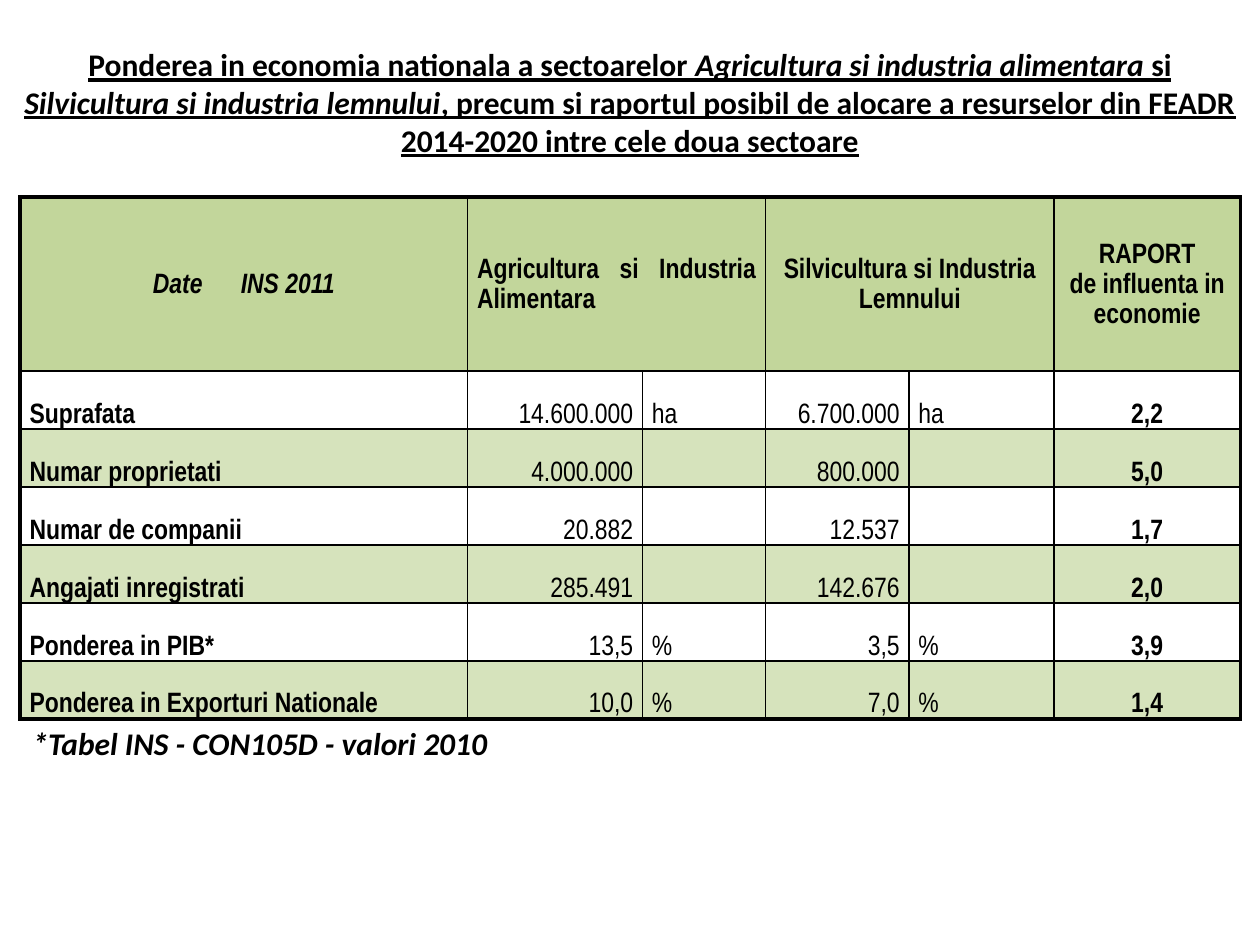
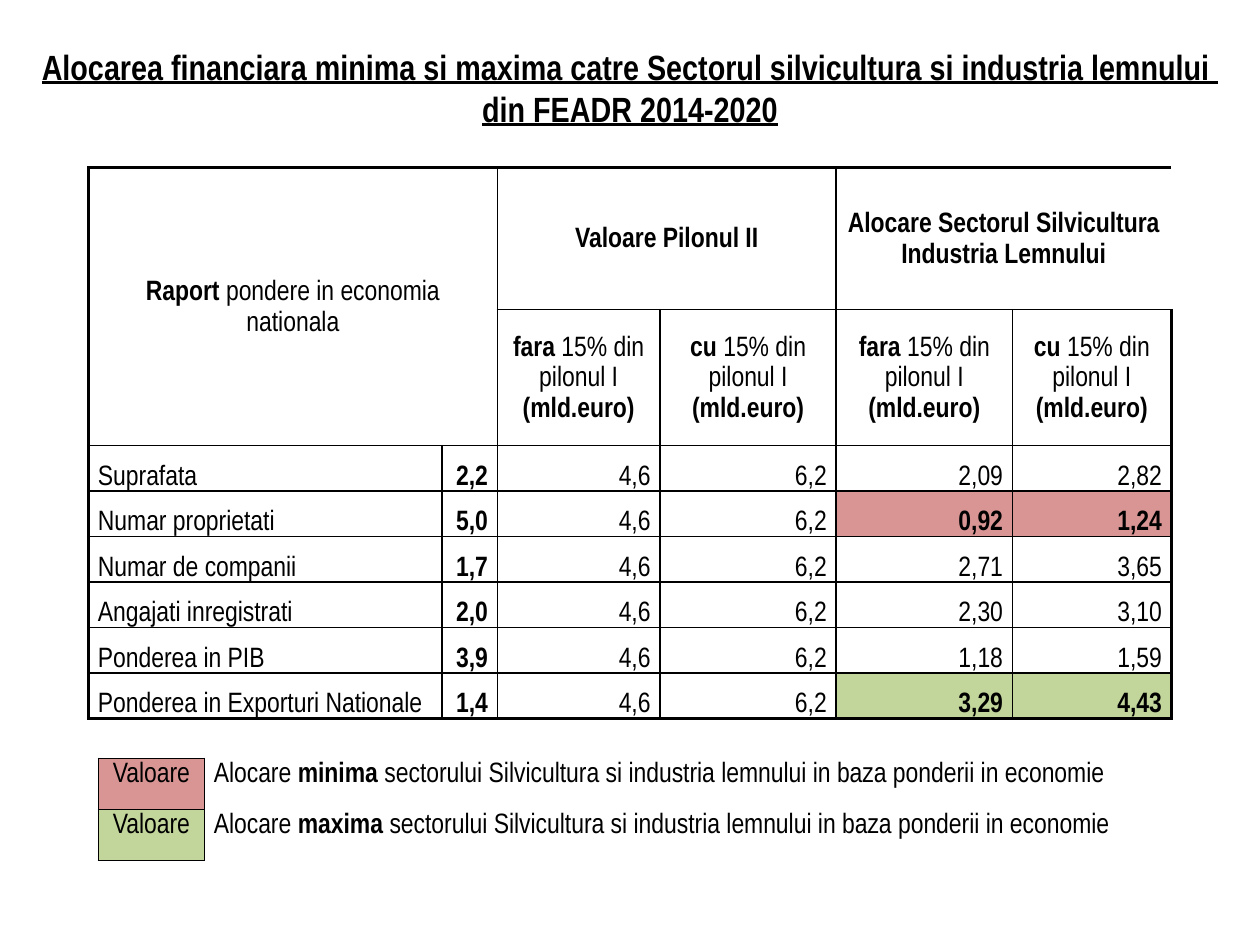
from lxml import etree
from pptx import Presentation
from pptx.dml.color import RGBColor
from pptx.enum.text import MSO_ANCHOR, PP_ALIGN
from pptx.oxml.ns import qn
from pptx.util import Pt

LEFT, CENTER, RIGHT, JUSTIFY = PP_ALIGN.LEFT, PP_ALIGN.CENTER, PP_ALIGN.RIGHT, PP_ALIGN.JUSTIFY
TOP, MIDDLE, BOTTOM = MSO_ANCHOR.TOP, MSO_ANCHOR.MIDDLE, MSO_ANCHOR.BOTTOM

BLACK = RGBColor(0x00, 0x00, 0x00)
OUTLINE_GREEN = RGBColor(0x77, 0x93, 0x3C)
GREEN = RGBColor(0xC2, 0xD6, 0x9B)
PALE_GREEN = RGBColor(0xD6, 0xE3, 0xBC)
RED = RGBColor(0xD9, 0x95, 0x94)

NARROW, CALIBRI = "Arial Narrow", "Calibri"
NO_STYLE = "{2D5ABB26-0587-4C30-8999-92F81FD0307C}"
SIDES = {"lnL": (0, -1), "lnR": (0, 1), "lnT": (-1, 0), "lnB": (1, 0)}
THICK, THIN = 2.25, 1


def add_line(parent, tag, width, color):
    """Add a solid line element, for a cell border or a text outline."""
    ln = etree.Element(qn(f"a:{tag}"), w=str(int(Pt(width))))
    fill = etree.SubElement(ln, qn("a:solidFill"))
    etree.SubElement(fill, qn("a:srgbClr"), val=str(color))
    parent.append(ln)


def format_run(r, size=16, font=NARROW, bold=False, italic=False,
               underline=False, outline=False, spacing=0):
    rPr = r._r.get_or_add_rPr()
    if outline:
        add_line(rPr, "ln", 0.83, OUTLINE_GREEN)
    if spacing:
        rPr.set("spc", str(int(spacing * 100)))
    f = r.font
    f.size, f.name, f.bold, f.italic, f.underline = Pt(size), font, bold, italic, underline
    f.color.rgb = BLACK


def put_text(tf, text, align=LEFT, line_spacing=None, marked=None, **fmt):
    """Write text; each line is a paragraph, parts between bars take the marked format."""
    for i, line in enumerate(text.split("\n")):
        p = tf.add_paragraph() if i else tf.paragraphs[0]
        p.alignment = align
        if line_spacing:
            p.line_spacing = line_spacing
        for j, part in enumerate(line.split("|")):
            if part:
                r = p.add_run()
                r.text = part
                format_run(r, **{**fmt, **(marked or {} if j % 2 else {})})


class Deck:
    def __init__(self):
        self.prs = Presentation()
        self.prs.slide_width, self.prs.slide_height = Pt(720), Pt(540)
        self.s = None

    def new_slide(self):
        self.s = self.prs.slides.add_slide(self.prs.slide_layouts[6])

    def text(self, box, text, anchor=TOP, wrap=True, **fmt):
        sp = self.s.shapes.add_textbox(*map(Pt, box))
        tf = sp.text_frame
        tf.word_wrap, tf.vertical_anchor = wrap, anchor
        put_text(tf, text, outline=True, bold=True, **fmt)

    def title(self, height, text, **fmt):
        self.text((0, 22.3, 720, height), text, align=CENTER, underline=True, **fmt)

    def table(self, left, top, cols, rows, data, look, merges=(),
              outer=THICK, open_after=(), bare_cols=()):
        """look(row, col) gives fill, anchor and text format of a cell."""
        frame = self.s.shapes.add_table(len(rows), len(cols), Pt(left), Pt(top),
                                        Pt(sum(cols)), Pt(sum(rows)))
        tbl = frame.table
        tbl.first_row = tbl.horz_banding = False
        tbl._tbl.tblPr.find(qn("a:tableStyleId")).text = NO_STYLE
        for col, width in zip(tbl.columns, cols):
            col.width = Pt(width)
        for row, height in zip(tbl.rows, rows):
            row.height = Pt(height)

        # Every grid position belongs to the first cell of its merged area
        owner = {(r, c): (r, c) for r in range(len(rows)) for c in range(len(cols))}
        for r1, c1, r2, c2 in merges:
            tbl.cell(r1, c1).merge(tbl.cell(r2, c2))
            for r in range(r1, r2 + 1):
                for c in range(c1, c2 + 1):
                    owner[r, c] = r1, c1

        for (r, c), own in owner.items():
            cell = tbl.cell(r, c)
            cell.margin_left = cell.margin_right = Pt(5.4)
            cell.margin_top = cell.margin_bottom = 0
            # Borders: thick or thin at the rim, thin inside
            for tag, (dr, dc) in SIDES.items():
                near = owner.get((r + dr, c + dc))
                is_open = r > 0 and dc and min(c, c + dc) in open_after
                if near != own and not is_open and c not in bare_cols:
                    add_line(cell._tc.get_or_add_tcPr(), tag, THIN if near else outer, BLACK)
            # Fill and text
            fmt = look(r, c)
            fill = fmt.pop("fill", None)
            if fill is None:
                cell.fill.background()
            else:
                cell.fill.solid()
                cell.fill.fore_color.rgb = fill
            cell.vertical_anchor = fmt.pop("anchor", TOP)
            if data[r][c]:
                put_text(cell.text_frame, data[r][c], line_spacing=1.15, **fmt)


def decimal(value):
    return f"{value:.2f}".replace(".", ",")


def economy_look(r, c):
    if r == 0:
        fmt = dict(fill=GREEN, anchor=MIDDLE, bold=True, align=JUSTIFY if c == 1 else CENTER)
        if c == 0:
            fmt.update(italic=True, marked=dict(spacing=18.25))
        return fmt
    return dict(fill=None if r % 2 else PALE_GREEN, anchor=BOTTOM, bold=c in (0, 5),
                align=(LEFT, RIGHT, LEFT, RIGHT, LEFT, CENTER)[c])


def economy_slide(deck):
    deck.new_slide()
    deck.title(72.7, "Ponderea in economia nationala a sectoarelor "
               "|Agricultura si industria alimentara| si "
               "|Silvicultura si industria lemnului|, precum si raportul posibil de alocare "
               "a resurselor din FEADR 2014-2020 intre cele doua sectoare",
               size=18, font=CALIBRI, marked=dict(italic=True))
    data = [
        ("Date| |INS 2011", "Agricultura si Industria Alimentara", "",
         "Silvicultura si Industria Lemnului", "", "RAPORT\nde influenta in economie"),
        ("Suprafata", "14.600.000", "ha", "6.700.000", "ha", "2,2"),
        ("Numar proprietati", "4.000.000", "", "800.000", "", "5,0"),
        ("Numar de companii", "20.882", "", "12.537", "", "1,7"),
        ("Angajati inregistrati", "285.491", "", "142.676", "", "2,0"),
        ("Ponderea in PIB*", "13,5", "%", "3,5", "%", "3,9"),
        ("Ponderea in Exporturi Nationale", "10,0", "%", "7,0", "%", "1,4"),
    ]
    deck.table(11.5, 112.6, (255.7, 100, 70.3, 82, 82.8, 106.5), [99.4] + [33.14] * 6,
               data, economy_look, merges=[(0, 1, 0, 2), (0, 3, 0, 4)], open_after=(1, 3))
    deck.text((11.5, 410.4, 278, 28.8), "*Tabel INS - CON105D - valori 2010",
              wrap=False, size=18, font=CALIBRI, italic=True)


def allocation_look(r, c):
    fmt = dict(marked=dict(bold=True))
    if r < 2:
        return dict(fmt, anchor=MIDDLE, align=CENTER)
    fill = {3: RED, 7: GREEN}.get(r) if c > 3 else None
    return dict(fmt, fill=fill, anchor=BOTTOM, align=RIGHT if c else LEFT,
                bold=c == 1 or fill is not None)


def legend_look(r, c):
    if c == 0:
        return dict(fill=(RED, GREEN)[r], align=CENTER)
    return dict(marked=dict(bold=True))


def allocation_slide(deck):
    deck.new_slide()
    deck.title(55.4, "Alocarea financiara minima si maxima catre Sectorul silvicultura "
               "si industria lemnului \ndin FEADR 2014-2020", size=20, anchor=MIDDLE)

    # Allocation of each pillar value = value / ratio
    without, included = [f"|{word}| 15% din pilonul I |(mld.euro)|" for word in ("fara", "cu")]
    data = [
        ("|Raport| pondere in economia nationala", "", "|Valoare Pilonul II|", "",
         "|Alocare Sectorul Silvicultura Industria Lemnului|", ""),
        ("", "", without, included, without, included),
    ]
    ratios = {"Suprafata": 2.2, "Numar proprietati": 5.0, "Numar de companii": 1.7,
              "Angajati inregistrati": 2.0, "Ponderea in PIB": 3.9,
              "Ponderea in Exporturi Nationale": 1.4}
    for label, ratio in ratios.items():
        data.append((label, f"{ratio:.1f}".replace(".", ","), "4,6", "6,2",
                     decimal(4.6 / ratio), decimal(6.2 / ratio)))
    deck.table(50.6, 95.8, (202, 31.6, 93, 100.7, 100.7, 90.8), [81.2, 77.7] + [26] * 6,
               data, allocation_look,
               merges=[(0, 0, 1, 1), (0, 2, 0, 3), (0, 4, 0, 5)])

    # Legend
    legend = [("Valoare", f"Alocare |{word}| sectorului Silvicultura si industria lemnului "
               "in baza ponderii in economie") for word in ("minima", "maxima")]
    deck.table(56.2, 433.4, (60.6, 558), [29.2] * 2, legend, legend_look,
               outer=THIN, bare_cols=(1,))


def main():
    deck = Deck()
    economy_slide(deck)
    allocation_slide(deck)
    deck.prs.save("out.pptx")


if __name__ == "__main__":
    main()
